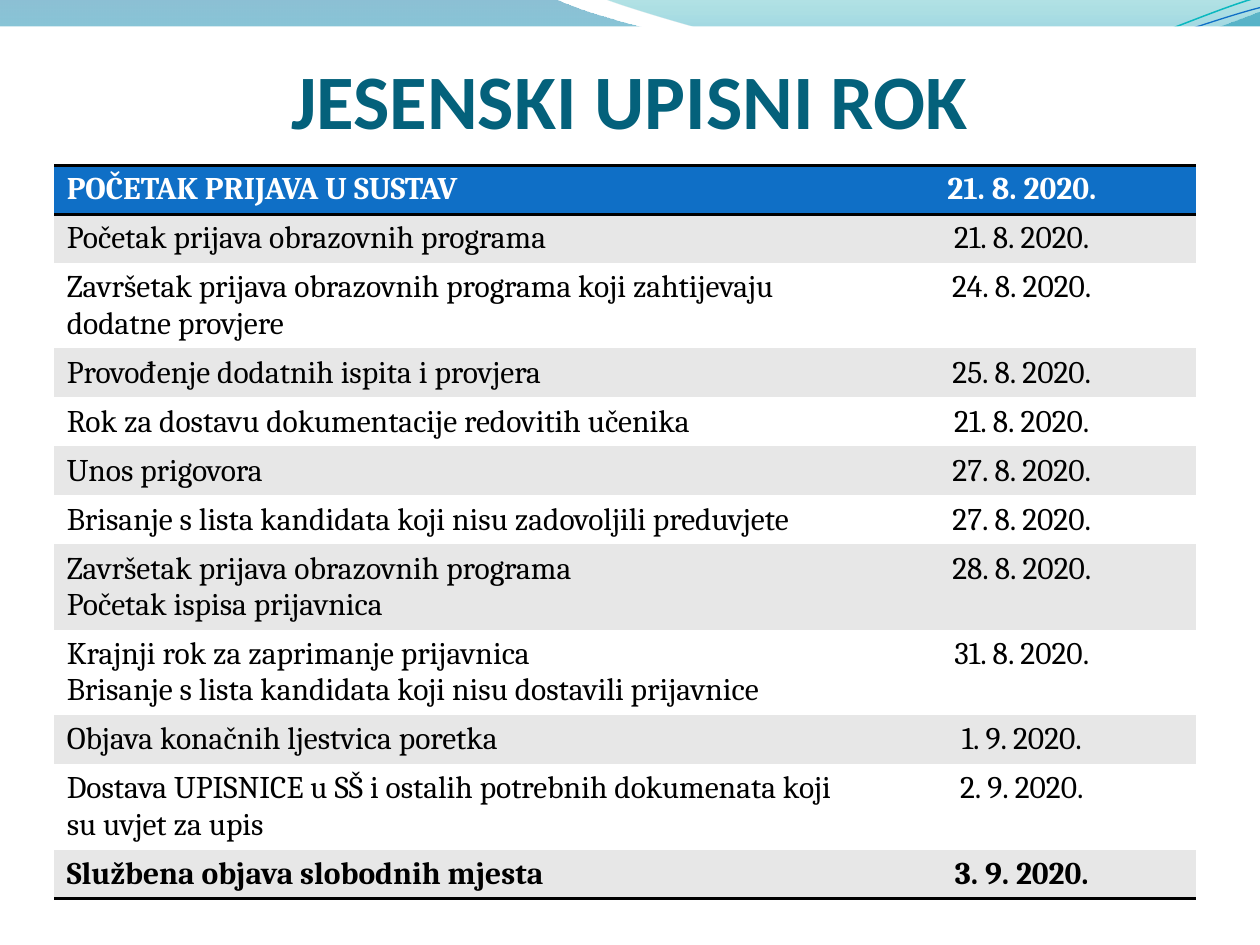
import math

from pptx import Presentation
from pptx import util as u
from pptx.dml.color import RGBColor
from pptx.enum import shapes, text
from pptx.oxml import parse_xml
from pptx.oxml.ns import nsdecls, qn

TITLE = "JESENSKI UPISNI ROK"
SCHEDULE = [
    (["POČETAK PRIJAVA U SUSTAV"], "21. 8. 2020."),
    (["Početak prijava obrazovnih programa"], "21. 8. 2020."),
    (["Završetak prijava obrazovnih programa koji zahtijevaju dodatne provjere"], "24. 8. 2020."),
    (["Provođenje dodatnih ispita i provjera"], "25. 8. 2020."),
    (["Rok za dostavu dokumentacije redovitih učenika"], "21. 8. 2020."),
    (["Unos prigovora"], "27. 8. 2020."),
    (["Brisanje s lista kandidata koji nisu zadovoljili preduvjete"], "27. 8. 2020."),
    (["Završetak prijava obrazovnih programa", "Početak ispisa prijavnica"], "28. 8. 2020."),
    (["Krajnji rok za zaprimanje prijavnica",
      "Brisanje s lista kandidata koji nisu dostavili prijavnice"], "31. 8. 2020."),
    (["Objava konačnih ljestvica poretka"], "1. 9. 2020."),
    (["Dostava UPISNICE u SŠ i ostalih potrebnih dokumenata koji su uvjet za upis"], "2. 9. 2020."),
    (["Službena objava slobodnih mjesta"], "3. 9. 2020."),
]
COLUMNS = (6.3, 2.76)
ROW_SINGLE, ROW_DOUBLE = 0.37, 0.64
LINE_LENGTH = 62

WAVES = [
    {"start": (0, 0),
     "segments": [(4.4, -0.01), (4.76, 0.17, 6.64, 0.63, 7.58, 0.63),
                  (8.53, 0.63, 9.58, 0.26, 10, 0.09), (10.01, 0.36),
                  (9.83, 0.44, 8.7, 0.76, 7.46, 0.75), (6.22, 0.75, 3.82, 0.28, 2.57, 0.34),
                  (1.29, 0.36, 0.46, 0.83, -0.01, 1.13), (0, 0)],
     "stops": [(0, "0074A1", 45), (100, "00C6CF", 55)]},
    {"start": (4.79, -0.01),
     "segments": [(5.09, 0.11, 6.82, 0.62, 7.69, 0.65),
                  (8.56, 0.69, 9.61, 0.32, 10, 0.21), (10, 0), (4.79, -0.01)],
     "stops": [(0, "00A1A9", 30), (80, "008BBF", 45)]},
    {"start": (0, 1.11),
     "segments": [(0.48, 0.93, 1.58, 0.57, 2.77, 0.52), (3.95, 0.47, 5.93, 0.89, 7.13, 0.8),
                  (8.33, 0.71, 9.38, 0.15, 9.98, -0.02)],
     "line": ("0AB8BF", 0.85), "pivot": (4.99, 0.575)},
    {"start": (0, 1.04),
     "segments": [(0.47, 0.96, 1.64, 0.61, 2.83, 0.56), (4.03, 0.51, 5.97, 0.84, 7.17, 0.75),
                  (8.36, 0.67, 9.41, 0.21, 10, 0.06)],
     "line": ("0F6FC6", 0.75), "pivot": (4.99, 0.59)},
]
TILT = 2.7


class Theme:
    title_font, body_font = "Calibri", "Cambria"
    title_size, body_size = 44, 18
    title, header, band = "04617B", "0F6FC6", "E7E7E7"
    white, black = "FFFFFF", "000000"
    rule_width = 2
    plain_table = "{2D5ABB26-0587-4C30-8999-92F81FD0307C}"


def rgb(value):
    return RGBColor.from_string(value)


def paint(target, color):
    target.fill.solid()
    target.fill.fore_color.rgb = rgb(color)


def style(para, name, size, color, bold, align):
    para.font.name, para.font.size, para.font.bold = name, u.Pt(size), bold
    para.font.color.rgb = rgb(color)
    para.alignment = align


def turn(point, pivot):
    angle = math.radians(TILT)
    x, y = point[0] - pivot[0], point[1] - pivot[1]
    return (pivot[0] + x * math.cos(angle) - y * math.sin(angle),
            pivot[1] + x * math.sin(angle) + y * math.cos(angle))


def bend(shape, segments):
    corners = iter(list(shape.element.iter(qn("a:lnTo"))))
    for segment in segments:
        first = next(corners)
        if len(segment) == 6:
            curve = parse_xml(f'<a:cubicBezTo {nsdecls("a")}/>')
            first.addprevious(curve)
            for corner in (first, next(corners), next(corners)):
                curve.append(corner[0])
                corner.getparent().remove(corner)


def gradient(stops):
    marks = "".join(
        f'<a:gs pos="{position * 1000}"><a:srgbClr val="{color}">'
        f'<a:alpha val="{alpha * 1000}"/></a:srgbClr></a:gs>'
        for position, color, alpha in stops)
    return parse_xml(f'<a:gradFill {nsdecls("a")} rotWithShape="1"><a:gsLst>{marks}</a:gsLst>'
                     '<a:lin ang="5400000" scaled="0"/></a:gradFill>')


def add_wave(page, wave):
    points = [wave["start"]]
    for segment in wave["segments"]:
        points += zip(segment[::2], segment[1::2])
    if "pivot" in wave:
        points = [turn(point, wave["pivot"]) for point in points]
    points = [(u.Inches(x), u.Inches(y)) for x, y in points]
    builder = page.shapes.build_freeform(*points[0])
    builder.add_line_segments(points[1:], close="stops" in wave)
    shape = builder.convert_to_shape()
    bend(shape, wave["segments"])
    shape.shadow.inherit = False
    shape.fill.background()
    if "stops" in wave:
        shape.line.fill.background()
        blank = shape.element.spPr.find(qn("a:noFill"))
        blank.getparent().replace(blank, gradient(wave["stops"]))
    else:
        color, width = wave["line"]
        shape.line.color.rgb = rgb(color)
        shape.line.width = u.Pt(width)
        shape.rotation = 360 - TILT


def add_title(page):
    box = page.shapes.add_shape(shapes.MSO_SHAPE.RECTANGLE, 0, u.Inches(0.21),
                                u.Inches(10), u.Inches(0.94))
    box.shadow.inherit = False
    paint(box, Theme.white)
    box.line.fill.background()
    frame = box.text_frame
    frame.word_wrap = True
    frame.vertical_anchor = text.MSO_ANCHOR.BOTTOM
    frame.margin_left = frame.margin_right = frame.margin_bottom = 0
    frame.margin_top = u.Inches(0.05)
    frame.text = TITLE
    style(frame.paragraphs[0], Theme.title_font, Theme.title_size, Theme.title, True,
          text.PP_ALIGN.CENTER)


def add_rules(cell, edges):
    properties = cell._tc.get_or_add_tcPr()
    for index, edge in enumerate(edges):
        line = parse_xml(
            f'<a:{edge} {nsdecls("a")} w="{u.Pt(Theme.rule_width)}"><a:solidFill>'
            f'<a:srgbClr val="{Theme.black}"/></a:solidFill></a:{edge}>')
        properties.insert(index, line)


def add_schedule(page):
    heights = [ROW_DOUBLE if len(lines) > 1 or len(lines[0]) > LINE_LENGTH else ROW_SINGLE
               for lines, date in SCHEDULE]
    frame = page.shapes.add_table(len(SCHEDULE), len(COLUMNS), u.Inches(0.43), u.Inches(1.31),
                                  u.Inches(sum(COLUMNS)), u.Inches(sum(heights)))
    table = frame.table
    table._tbl.tblPr.find(qn("a:tableStyleId")).text = Theme.plain_table
    for column, width in zip(table.columns, COLUMNS):
        column.width = u.Inches(width)
    last = len(SCHEDULE) - 1
    for number, (lines, date) in enumerate(SCHEDULE):
        table.rows[number].height = u.Inches(heights[number])
        header = number == 0
        fill = Theme.header if header else Theme.band if number % 2 else Theme.white
        color = Theme.white if header else Theme.black
        edges = ("lnT", "lnB") if header else ("lnB",) if number == last else ()
        for index, content in enumerate(("\n".join(lines), date)):
            cell = table.cell(number, index)
            cell.text = content
            paint(cell, fill)
            add_rules(cell, edges)
            align = text.PP_ALIGN.CENTER if index else text.PP_ALIGN.LEFT
            for para in cell.text_frame.paragraphs:
                style(para, Theme.body_font, Theme.body_size, color,
                      number in (0, last), align)


def main():
    deck = Presentation()
    deck.slide_width, deck.slide_height = u.Inches(10), u.Inches(7.5)
    page = deck.slides.add_slide(deck.slide_layouts[6])
    for wave in WAVES:
        add_wave(page, wave)
    add_title(page)
    add_schedule(page)
    deck.save("out.pptx")


if __name__ == "__main__":
    main()
